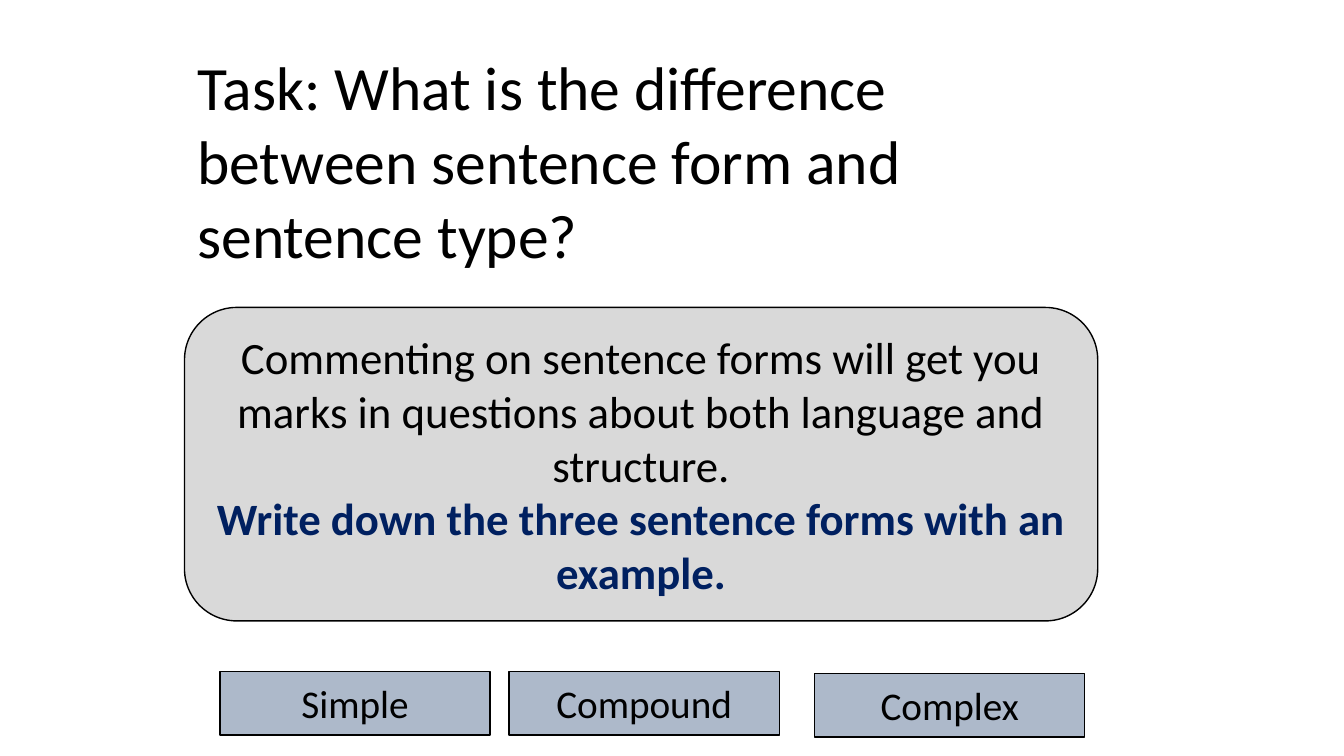
import pptx
import pptx.util
import pptx.dml.color
import pptx.enum.shapes
import pptx.enum.text

Pt = pptx.util.Pt
SHAPES = pptx.enum.shapes.MSO_SHAPE
ALIGN = pptx.enum.text.PP_ALIGN
ANCHOR = pptx.enum.text.MSO_ANCHOR
AUTO = pptx.enum.text.MSO_AUTO_SIZE


def rgb(value):
    return pptx.dml.color.RGBColor.from_string(value)


class Deck:
    font = "Calibri"
    ink = "000000"

    def __init__(self, width, height):
        self.prs = pptx.Presentation()
        self.prs.slide_width, self.prs.slide_height = Pt(width), Pt(height)
        self.s = self.prs.slides.add_slide(self.prs.slide_layouts[6])

    def fill_text(self, tf, paragraphs, size, align):
        tf.word_wrap = True
        for i, (text, changes) in enumerate(paragraphs):
            p = tf.add_paragraph() if i else tf.paragraphs[0]
            p.alignment = align
            r = p.add_run()
            r.text = text
            fmt = {"name": self.font, "size": Pt(size), "color": self.ink, **changes}
            r.font.color.rgb = rgb(fmt.pop("color"))
            for key, value in fmt.items():
                setattr(r.font, key, value)

    def text(self, box, paragraphs, size):
        tf = self.s.shapes.add_textbox(*map(Pt, box)).text_frame
        self.fill_text(tf, paragraphs, size, ALIGN.LEFT)
        tf.auto_size = AUTO.SHAPE_TO_FIT_TEXT

    def shape(self, kind, box, fill, paragraphs, size):
        sp = self.s.shapes.add_shape(kind, *map(Pt, box))
        sp.shadow.inherit = False
        sp.fill.solid()
        sp.fill.fore_color.rgb = rgb(fill)
        sp.line.color.rgb = rgb(self.ink)
        sp.line.width = Pt(1)
        sp.text_frame.vertical_anchor = ANCHOR.MIDDLE
        self.fill_text(sp.text_frame, paragraphs, size, ALIGN.CENTER)


def main():
    deck = Deck(960, 540)
    deck.text(
        (133.9, 31.7, 652.3, 167),
        [("Task: What is the difference between sentence form and sentence type?", {})],
        44,
    )
    deck.shape(
        SHAPES.ROUNDED_RECTANGLE,
        (131.8, 219.6, 652.3, 223.9),
        "D9D9D9",
        [
            ("Commenting on sentence forms will get you marks in questions "
             "about both language and structure.", {}),
            ("Write down the three sentence forms with an example.",
             {"color": "002060", "bold": True}),
        ],
        32,
    )
    forms = [("Simple", 157, 479.5), ("Compound", 363.6, 479.5), ("Complex", 581.8, 481)]
    for form, left, top in forms:
        deck.shape(SHAPES.RECTANGLE, (left, top, 193, 45.4), "ADB9CA", [(form, {})], 28)
    deck.prs.save("out.pptx")


if __name__ == "__main__":
    main()
